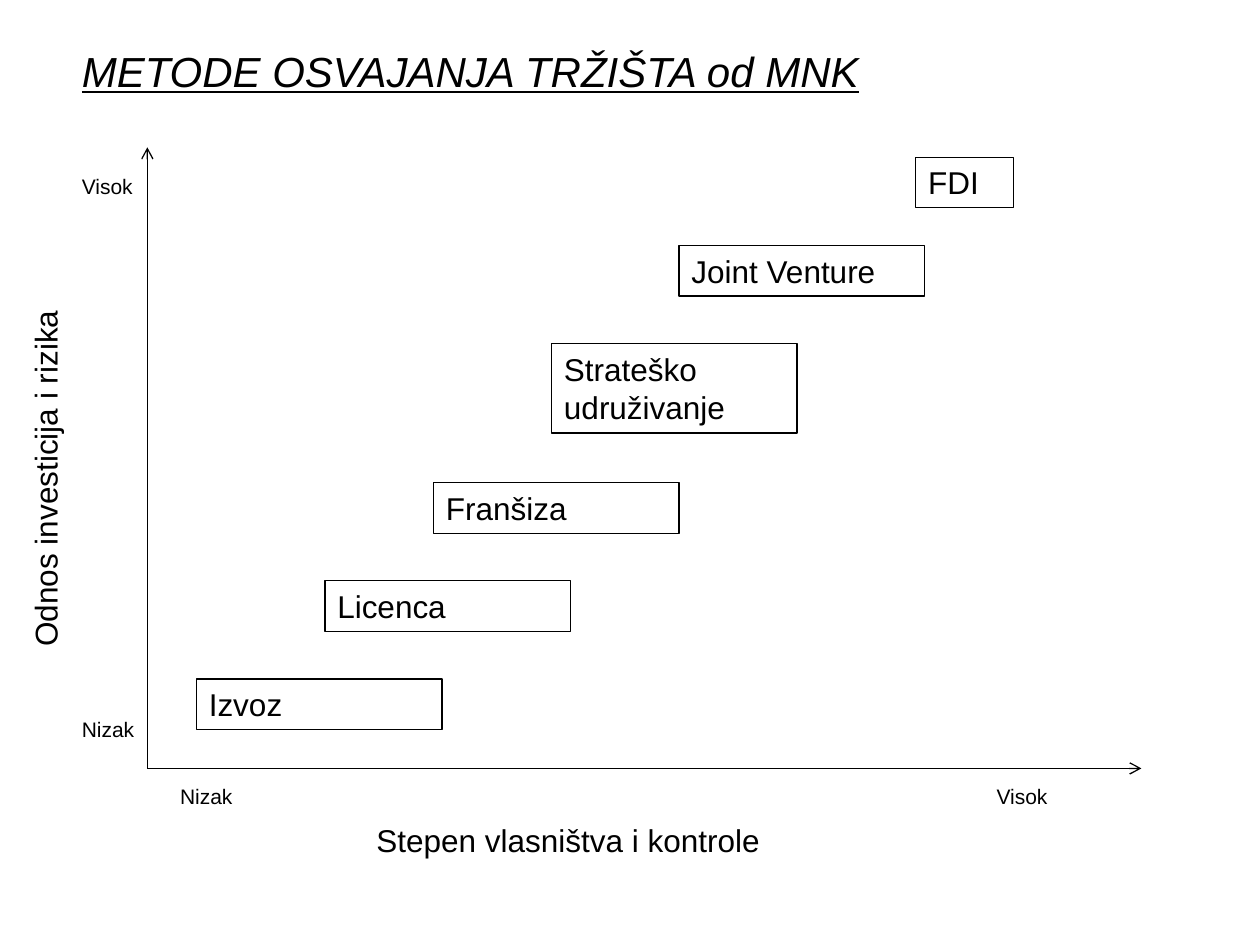
from lxml import etree
from pptx import Presentation
from pptx.dml.color import RGBColor
from pptx.enum.shapes import MSO_CONNECTOR, MSO_SHAPE
from pptx.enum.text import MSO_ANCHOR, MSO_AUTO_SIZE, PP_ALIGN
from pptx.oxml.ns import qn
from pptx.util import Cm, Pt

RECTANGLE = MSO_SHAPE.RECTANGLE
STRAIGHT = MSO_CONNECTOR.STRAIGHT
TOP = MSO_ANCHOR.TOP
LEFT = PP_ALIGN.LEFT
GROW = MSO_AUTO_SIZE.SHAPE_TO_FIT_TEXT

COLORS = {"ink": "000000"}
INK = RGBColor.from_string(COLORS["ink"])
FONT = "Arial"

LINE_HEIGHT = 1.02
METHOD_WIDTH = 4.95
METHODS = [
    ("Izvoz", 0.99, 10.72, METHOD_WIDTH, LINE_HEIGHT),
    ("Licenca", 3.58, 8.74, METHOD_WIDTH, LINE_HEIGHT),
    ("Franšiza", 5.77, 6.76, METHOD_WIDTH, LINE_HEIGHT),
    ("Strateško udruživanje", 8.15, 3.96, METHOD_WIDTH, 1.8),
    ("Joint Venture", 10.72, 1.98, METHOD_WIDTH, LINE_HEIGHT),
    ("FDI", 15.49, 0.2, 1.98, LINE_HEIGHT),
]
SCALE_ENDS = [
    ("Nizak", 0.41, 12.7),
    ("Visok", 16.87, 12.7),
    ("Visok", -1.57, 0.41),
    ("Nizak", -1.57, 11.35),
]


def write(shape, text, size):
    """Set and format the text of a shape, and return its font."""
    frame = shape.text_frame
    frame.text = text
    frame.word_wrap = True
    frame.auto_size = GROW
    frame.vertical_anchor = TOP
    paragraph = frame.paragraphs[0]
    paragraph.alignment = LEFT
    font = paragraph.runs[0].font
    font.name = FONT
    font.size = Pt(size)
    font.color.rgb = INK
    return font


def add_label(slide, text, left, top, width, height, size):
    """Add a plain text label."""
    label = slide.shapes.add_textbox(Cm(left), Cm(top), Cm(width), Cm(height))
    write(label, text, size)
    return label


def add_method(slide, text, left, top, width, height):
    """Add an outlined box naming one market entry method."""
    method = slide.shapes.add_shape(RECTANGLE, Cm(left), Cm(top), Cm(width), Cm(height))
    method.shadow.inherit = False
    method.fill.background()
    method.line.color.rgb = INK
    method.line.width = Pt(0.75)
    write(method, text, 18)


def add_axis(slide, start, end):
    """Add an axis line with an open arrowhead at its end."""
    axis = slide.shapes.add_connector(STRAIGHT, *map(Cm, start + end))
    axis.line.color.rgb = INK
    axis.line.width = Pt(0.75)
    properties = axis._element.spPr
    etree.SubElement(properties.find(qn("a:ln")), qn("a:tailEnd"), type="arrow")
    etree.SubElement(properties, qn("a:effectLst"))


def add_title(slide, left, top, width, height):
    """Add the underlined italic heading."""
    title = slide.shapes.add_textbox(Cm(left), Cm(top), Cm(width), Cm(height))
    font = write(title, "METODE OSVAJANJA TRŽIŠTA od MNK", 24)
    font.italic = True
    font.underline = True


def add_diagram(slide, left, top, width, height):
    """Place the methods between the risk and control axes."""
    for text, x, y, box_width, box_height in METHODS:
        add_method(slide, text, left + x, top + y, box_width, box_height)
    origin = (left, top + height)
    add_axis(slide, origin, (left + width, top + height))
    add_axis(slide, origin, (left, top))
    risk = add_label(slide, "Odnos investicija i rizika",
                     left - 7.11, top + 4.75, 10.11, LINE_HEIGHT, 18)
    risk.rotation = 270
    add_label(slide, "Stepen vlasništva i kontrole",
              left + 4.37, top + 13.46, 10.31, LINE_HEIGHT, 18)
    for text, x, y in SCALE_ENDS:
        add_label(slide, text, left + x, top + y, 2.59, 0.76, 12)


def main():
    """Build and save the slide."""
    presentation = Presentation()
    presentation.slide_width = Cm(25.4)
    presentation.slide_height = Cm(19.05)
    slide = presentation.slides.add_slide(presentation.slide_layouts[6])
    add_diagram(slide, 2.97, 2.97, 20.04, 12.52)
    add_title(slide, 1.4, 0.79, 19.05, 1.3)
    presentation.save("out.pptx")


if __name__ == "__main__":
    main()
